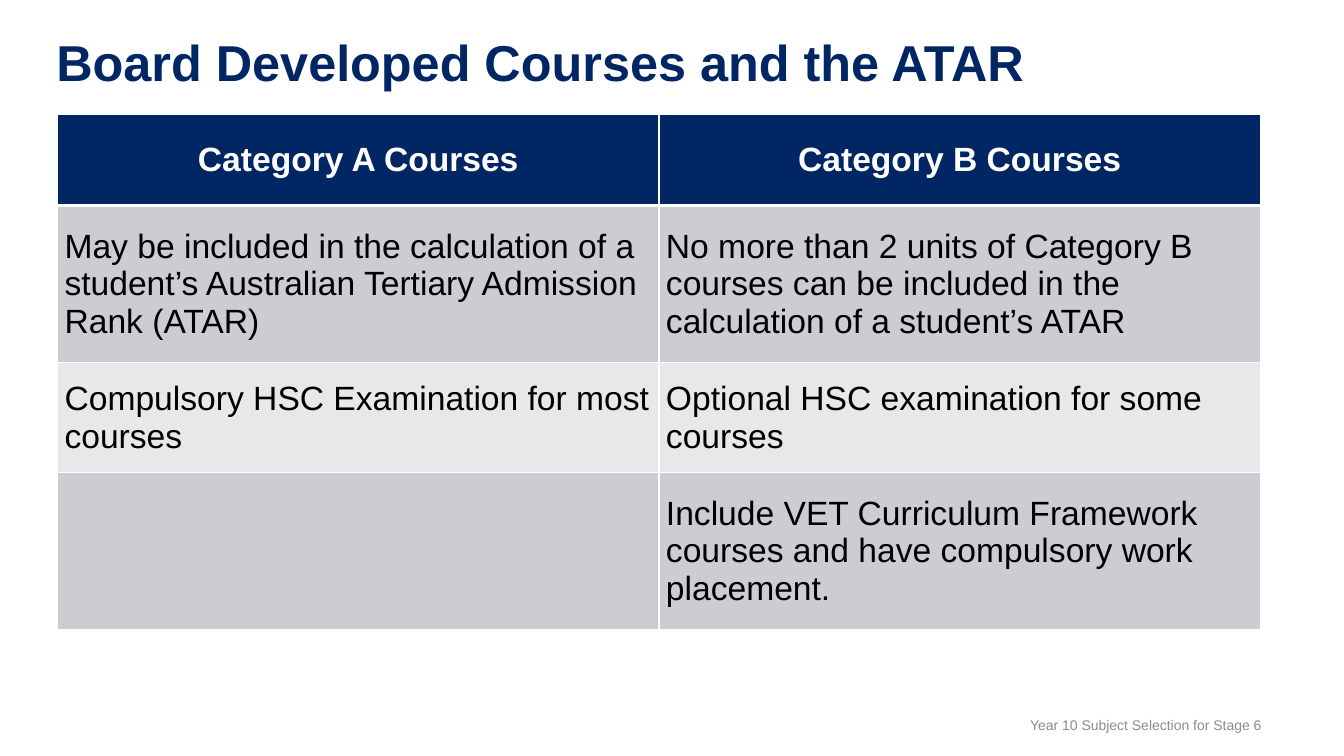
"""Build the slide comparing Category A and Category B courses."""
import dataclasses
import typing

import lxml.etree
import pptx
import pptx.dml.color
import pptx.enum.text
import pptx.oxml.ns
import pptx.util

NAVY = pptx.dml.color.RGBColor(0x00, 0x26, 0x64)
WHITE = pptx.dml.color.RGBColor(0xFF, 0xFF, 0xFF)
BLACK = pptx.dml.color.RGBColor(0x00, 0x00, 0x00)
GREY = pptx.dml.color.RGBColor(0x8C, 0x8C, 0x8C)
BAND_DARK = pptx.dml.color.RGBColor(0xCC, 0xCD, 0xD3)
BAND_LIGHT = pptx.dml.color.RGBColor(0xE7, 0xE8, 0xEA)

SLIDE_WIDTH = pptx.util.Inches(13.33)
SLIDE_HEIGHT = pptx.util.Inches(7.5)
COLUMN_WIDTH = 44.75
ALIGN = pptx.enum.text.PP_ALIGN
ANCHOR = pptx.enum.text.MSO_ANCHOR
SIDES = ("L", "R", "T", "B")


@dataclasses.dataclass(frozen=True)
class TextStyle:
    """Format values for a paragraph and its font."""

    size: int
    color: pptx.dml.color.RGBColor
    bold: bool = False
    paragraph: dict[str, typing.Any] = dataclasses.field(default_factory=dict)


@dataclasses.dataclass(frozen=True)
class Label:
    """A text box placed by percentages of the slide's size."""

    text: str
    left: float
    top: float
    width: float
    height: float
    style: TextStyle
    frame: dict[str, typing.Any] = dataclasses.field(default_factory=dict)


@dataclasses.dataclass(frozen=True)
class CourseRow:
    """A table row with its height as a percentage of the slide."""

    height: float
    texts: tuple[str, str]
    fill: pptx.dml.color.RGBColor
    style: TextStyle
    bottom_border: int = 1
    top_border: int = 1


HEADING = TextStyle(24, WHITE, True, {"alignment": ALIGN.CENTER})
BODY = TextStyle(24, BLACK)

LABELS = (
    Label("Year 10 Subject Selection for Stage 6", 60.09, 94.8, 33.76, 2.27,
          TextStyle(10, GREY, False, {"alignment": ALIGN.RIGHT}),
          {"vertical_anchor": ANCHOR.BOTTOM, "margin_left": 0, "margin_right": 0,
           "margin_top": 0, "margin_bottom": 0}),
    Label("Board Developed Courses and the ATAR", 3.45, 4.4, 90.32, 8.4,
          TextStyle(36, NAVY, True, {"line_spacing": 0.9})),
)

COURSE_ROWS = (
    CourseRow(12.13, ("Category A Courses", "Category B Courses"), NAVY, HEADING,
              bottom_border=3),
    CourseRow(20.8, (
        "May be included in the calculation of a student’s Australian Tertiary "
        "Admission Rank (ATAR)",
        "No more than 2 units of Category B courses can be included in the "
        "calculation of a student’s ATAR"), BAND_DARK, BODY, top_border=3),
    CourseRow(14.53, ("Compulsory HSC Examination for most courses",
                      "Optional HSC examination for some courses"), BAND_LIGHT, BODY),
    CourseRow(20.8, ("", "Include VET Curriculum Framework courses and have "
                     "compulsory work placement."), BAND_DARK, BODY),
)


def across(percent: float) -> int:
    """Return a percentage of the slide's width."""
    return round(SLIDE_WIDTH * percent / 100)


def down(percent: float) -> int:
    """Return a percentage of the slide's height."""
    return round(SLIDE_HEIGHT * percent / 100)


def set_values(target: typing.Any, values: dict[str, typing.Any]) -> None:
    """Set each named format value on the target."""
    for name, value in values.items():
        setattr(target, name, value)


def write_text(frame: typing.Any, text: str, style: TextStyle) -> None:
    """Write one styled paragraph into a text frame."""
    para = frame.paragraphs[0]
    set_values(para, style.paragraph)
    span = para.add_run()
    span.text = text
    set_values(span.font, {"name": "Arial", "size": pptx.util.Pt(style.size),
                           "bold": style.bold})
    span.font.color.rgb = style.color


def draw_label(page: typing.Any, label: Label) -> None:
    """Draw a text box."""
    box = page.shapes.add_textbox(across(label.left), down(label.top),
                                  across(label.width), down(label.height))
    set_values(box.text_frame, {"word_wrap": True, **label.frame})
    write_text(box.text_frame, label.text, label.style)


def draw_borders(cell: typing.Any, row: CourseRow) -> None:
    """Give a cell white borders on all sides."""
    properties = cell._tc.get_or_add_tcPr()
    widths = {"T": row.top_border, "B": row.bottom_border}
    for side in SIDES:
        line = lxml.etree.SubElement(properties, pptx.oxml.ns.qn(f"a:ln{side}"),
                                     w=str(pptx.util.Pt(widths.get(side, 1))))
        fill = lxml.etree.SubElement(line, pptx.oxml.ns.qn("a:solidFill"))
        lxml.etree.SubElement(fill, pptx.oxml.ns.qn("a:srgbClr"), val=str(WHITE))


def draw_table(page: typing.Any, rows: tuple[CourseRow, ...]) -> None:
    """Draw the table of course categories."""
    column_count = len(rows[0].texts)
    table = page.shapes.add_table(
        len(rows), column_count, across(4.28), down(15.07),
        across(COLUMN_WIDTH * column_count),
        down(sum(row.height for row in rows))).table
    for column in table.columns:
        column.width = across(COLUMN_WIDTH)
    for row_index, row in enumerate(rows):
        table.rows[row_index].height = down(row.height)
        for column_index, text in enumerate(row.texts):
            cell = table.cell(row_index, column_index)
            set_values(cell, {
                "vertical_anchor": ANCHOR.MIDDLE,
                "margin_left": pptx.util.Inches(0.07),
                "margin_right": pptx.util.Inches(0.07),
                "margin_top": pptx.util.Inches(0.04),
                "margin_bottom": pptx.util.Inches(0.04)})
            draw_borders(cell, row)
            cell.fill.solid()
            cell.fill.fore_color.rgb = row.fill
            if text:
                write_text(cell.text_frame, text, row.style)


def main() -> None:
    """Build and save the deck."""
    deck = pptx.Presentation()
    set_values(deck, {"slide_width": SLIDE_WIDTH, "slide_height": SLIDE_HEIGHT})
    page = deck.slides.add_slide(deck.slide_layouts[6])
    for label in LABELS:
        draw_label(page, label)
    draw_table(page, COURSE_ROWS)
    deck.save("out.pptx")


if __name__ == "__main__":
    main()
